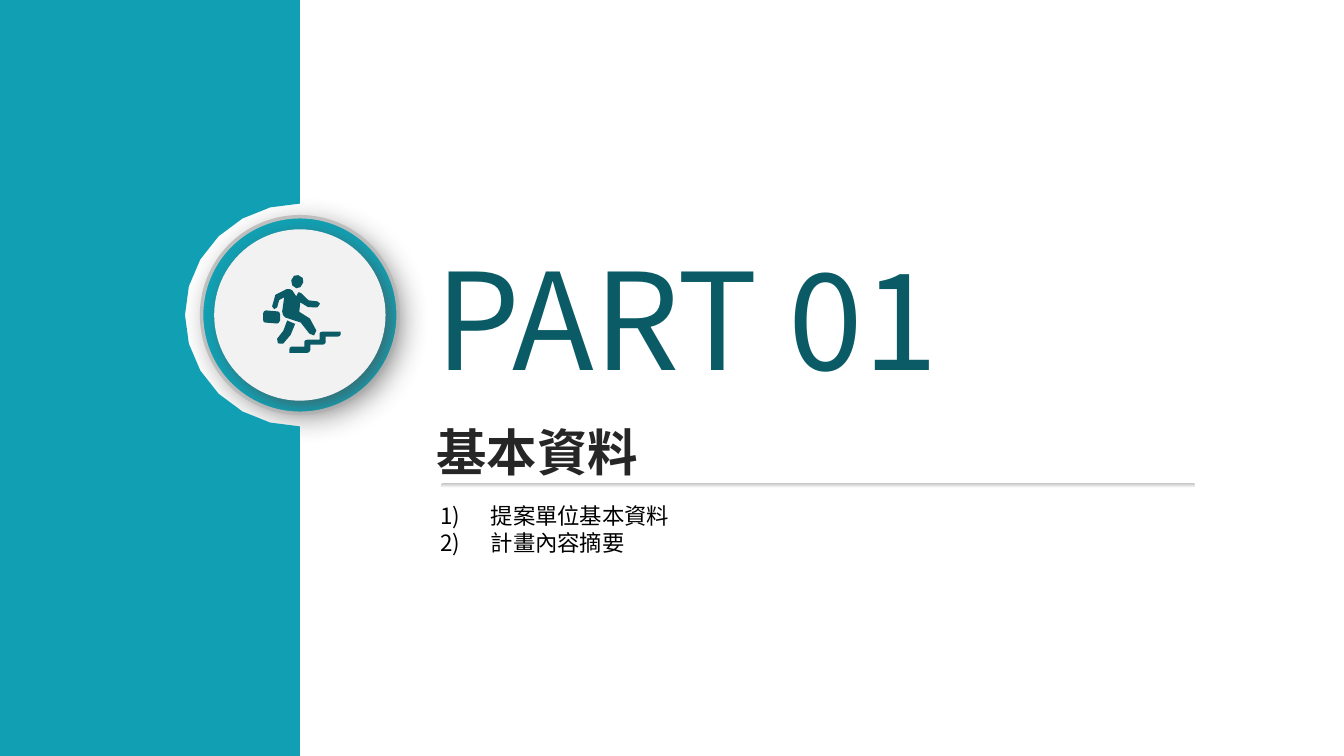
import math

import lxml.etree
import pptx
import pptx.dml.color
import pptx.enum.shapes
import pptx.enum.text
import pptx.oxml.ns
import pptx.util

# Grid cells are a hundredth of an inch; the slide is 750 rows high at 16:9
CELL = pptx.util.Inches(0.01)
ROWS = 750
COLUMNS = ROWS * 16 / 9
COLORS = {
    "teal": "11A0B3", "dark teal": "0A5B66", "disc": "F2F2F2", "white": "FFFFFF",
    "grey": "BFBFBF", "heading": "262626", "black": "000000", "shadow": "525252",
}
SHAPES = pptx.enum.shapes.MSO_SHAPE
ALIGN = pptx.enum.text.PP_ALIGN

# Climber outlines: a pair is a corner, six numbers are a curve's controls and end
BRIEFCASE = [
    (263, 320), (275, 321), (276, 321, 277, 320, 278, 318), (278, 312),
    (278, 311, 277, 309, 276, 309), (264, 308), (263, 308, 261, 309, 261, 311),
    (261, 317), (261, 319, 262, 320, 263, 320),
]
BACK_LEG = [
    (275, 336), (281, 329, 282, 328, 285, 318), (287, 319, 290, 320, 292, 321),
    (293, 321), (289, 332, 289, 333, 281, 341), (278, 344, 272, 339, 275, 336),
]
HEAD = [
    (296, 273), (300, 274, 302, 277, 301, 280), (300, 284, 297, 287, 294, 286),
    (290, 286, 289, 281, 289, 278), (290, 274, 293, 272, 296, 273),
]
BODY = [
    (296, 290), (296, 290, 298, 290, 299, 291), (307, 299, 305, 299, 315, 299),
    (319, 298, 318, 304, 315, 305), (306, 305, 305, 306, 298, 300), (297, 309),
    (297, 309, 297, 310, 298, 310), (307, 315, 309, 315, 314, 328),
    (315, 333, 309, 335, 307, 331), (300, 318, 299, 320, 283, 315),
    (281, 313, 280, 312, 280, 309), (282, 295), (276, 297, 277, 297, 275, 305),
    (275, 308, 269, 307, 270, 304), (271, 292, 273, 291, 284, 287),
    (286, 286, 289, 287, 290, 288), (294, 294), (296, 290),
]
STAIRS = [
    (289, 344), (302, 344), (302, 339), (302, 338, 303, 337, 305, 337),
    (317, 337), (317, 331), (317, 330, 318, 329, 320, 329), (338, 329),
    (338, 332), (338, 333, 336, 334, 335, 334), (323, 334), (323, 340),
    (323, 341, 321, 342, 320, 342), (308, 342), (308, 347),
    (308, 349, 306, 350, 305, 350), (287, 350), (287, 347),
    (287, 345, 288, 344, 289, 344),
]


def flatten(outline, steps=2):
    """Turn an outline of corners and curves into plain points."""
    points = [outline[0]]
    for segment in outline[1:]:
        if len(segment) == 2:
            points.append(segment)
            continue
        controls = [points[-1], segment[:2], segment[2:4], segment[4:]]
        for step in range(1, steps + 1):
            t = step / steps
            weights = [math.comb(3, i) * t**i * (1 - t) ** (3 - i) for i in range(4)]
            points.append(tuple(
                sum(w * control[axis] for w, control in zip(weights, controls))
                for axis in (0, 1)
            ))
    return points


class SlideBuilder:
    """Holds the style and the current slide; lengths are in grid cells."""

    font = "Noto Sans CJK SC"

    def __init__(self, presentation):
        self.slide = presentation.slides.add_slide(presentation.slide_layouts[6])

    def color(self, name):
        return pptx.dml.color.RGBColor.from_string(COLORS[name])

    def cells(self, *lengths):
        return [round(length * CELL) for length in lengths]

    def paint(self, shape, fill, line=None):
        shape.shadow.inherit = False
        shape.fill.solid()
        shape.fill.fore_color.rgb = self.color(fill)
        if line:
            shape.line.color.rgb = self.color(line)
            shape.line.width = pptx.util.Pt(2.5)
        else:
            shape.line.fill.background()
        return shape

    def preset(self, kind, left, top, width, height, fill, line=None):
        box = self.cells(left, top, width, height)
        return self.paint(self.slide.shapes.add_shape(kind, *box), fill, line)

    def circle(self, center, radius, fill, line=None):
        x, y = center
        return self.preset(SHAPES.OVAL, x - radius, y - radius,
                           2 * radius, 2 * radius, fill, line)

    def outline(self, contours, fill):
        first, *others = [[self.cells(*point) for point in contour] for contour in contours]
        builder = self.slide.shapes.build_freeform(*first[0], scale=1.0)
        builder.add_line_segments(first[1:], close=True)
        for contour in others:
            builder.move_to(*contour[0])
            builder.add_line_segments(contour[1:], close=True)
        return self.paint(builder.convert_to_shape(), fill)

    def gradient(self, shape, *names):
        shape.fill.gradient()
        shape.fill.gradient_angle = 270
        for stop, name in zip(shape.fill.gradient_stops, names):
            stop.color.rgb = self.color(name)

    def shadow(self, shape, blur, percent):
        effects = shape._element.spPr.find(pptx.oxml.ns.qn("a:effectLst"))
        outer = lxml.etree.SubElement(
            effects, pptx.oxml.ns.qn("a:outerShdw"), blurRad=str(pptx.util.Pt(blur)),
            dist=str(pptx.util.Pt(5)), dir="2700000", algn="tl", rotWithShape="0")
        tint = lxml.etree.SubElement(outer, pptx.oxml.ns.qn("a:srgbClr"), val=COLORS["shadow"])
        lxml.etree.SubElement(tint, pptx.oxml.ns.qn("a:alpha"), val=str(percent * 1000))

    def text(self, left, top, width, height, text, size, color,
             bold=False, align=ALIGN.LEFT, numbered=False):
        box = self.slide.shapes.add_textbox(*self.cells(left, top, width, height))
        frame = box.text_frame
        frame.word_wrap = True
        frame.auto_size = pptx.enum.text.MSO_AUTO_SIZE.SHAPE_TO_FIT_TEXT
        frame.text = text
        for paragraph in frame.paragraphs:
            paragraph.alignment = align
            if numbered:
                self.number(paragraph)
            for run in paragraph.runs:
                run.font.name = self.font
                run.font.size = pptx.util.Pt(size)
                run.font.bold = bold
                run.font.color.rgb = self.color(color)
                lxml.etree.SubElement(run.font._element, pptx.oxml.ns.qn("a:ea"),
                                      typeface=self.font)

    def number(self, paragraph):
        properties = paragraph._p.get_or_add_pPr()
        indent = 50 * CELL
        properties.set("marL", str(indent))
        properties.set("indent", str(-indent))
        lxml.etree.SubElement(properties, pptx.oxml.ns.qn("a:buFont"), typeface=self.font)
        lxml.etree.SubElement(properties, pptx.oxml.ns.qn("a:buAutoNum"), type="arabicParenR")


def main():
    presentation = pptx.Presentation()
    presentation.slide_width = round(COLUMNS * CELL)
    presentation.slide_height = ROWS * CELL
    section = SlideBuilder(presentation)

    # Badge
    center = panel_edge, middle = 297.5, 312.5
    section.circle(center, 130.5, "white")
    section.shadow(section.circle(center, 97.5, "teal", line="grey"), blur=18, percent=45)
    section.shadow(section.circle(center, 85, "disc"), blur=12, percent=64)

    # Side panel with a round notch, bleeding over the top and bottom
    notch = [
        (panel_edge - 114 * math.sin(math.radians(angle)),
         middle - 110.5 * math.cos(math.radians(angle)))
        for angle in range(0, 181, 15)
    ]
    top, bottom = -38, 773
    section.outline([[(0, top), (panel_edge, top), *notch,
                      (panel_edge, bottom), (0, bottom)]], "teal")

    # Section title and divider
    divider = section.preset(SHAPES.ROUNDED_RECTANGLE, 438, 479, 748, 5, "grey")
    divider.adjustments[0] = 0.5
    section.gradient(divider, "grey", "white")
    section.text(422, 229, 525, 171, "PART 01", 96, "dark teal")
    section.text(423, 413, 363, 71, "基本資料", 36, "heading", bold=True, align=ALIGN.JUSTIFY)

    # Contents
    section.text(427, 493, 759, 64, "提案單位基本資料\n計畫內容摘要", 16, "black", numbered=True)

    # Climber on stairs
    for parts in ([STAIRS], [BRIEFCASE, BACK_LEG, HEAD, BODY]):
        section.outline([flatten(part) for part in parts], "dark teal")

    presentation.save("out.pptx")


if __name__ == "__main__":
    main()
